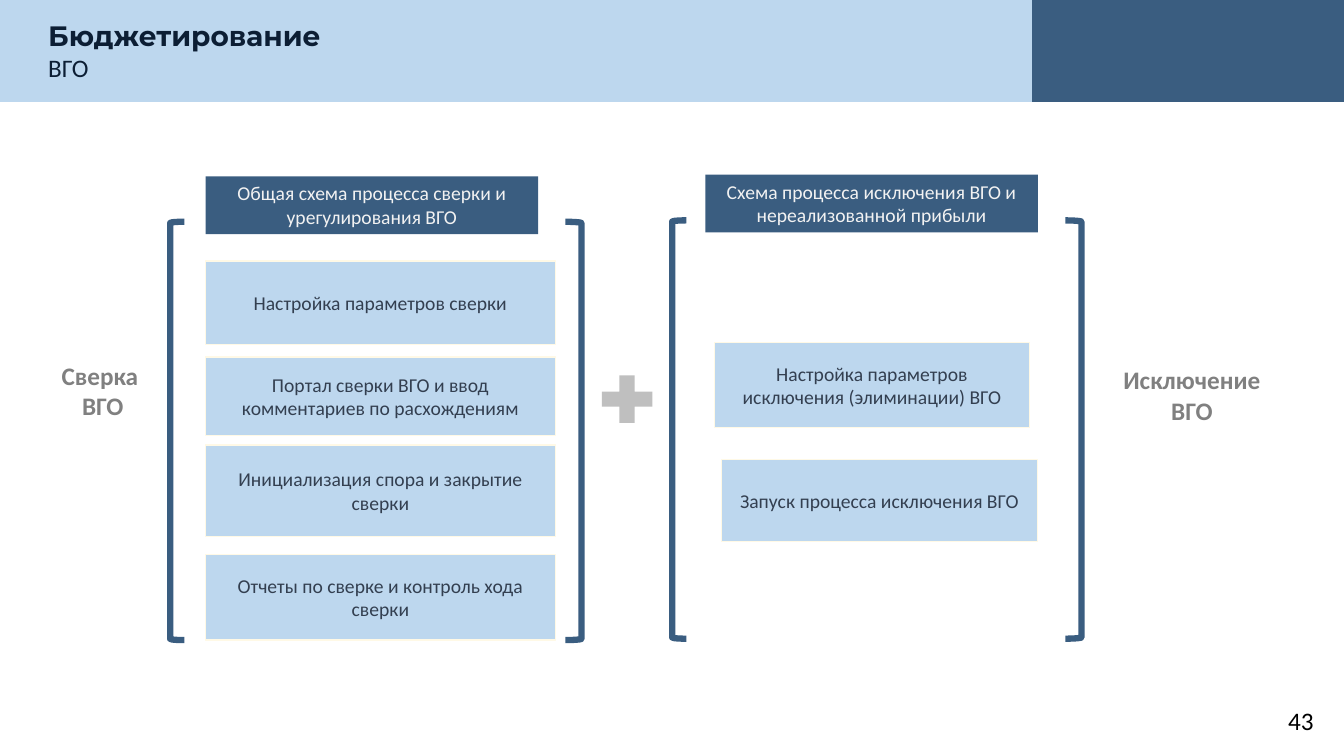
from dataclasses import dataclass
from pptx import Presentation
from pptx.dml.color import RGBColor
from pptx.enum.shapes import MSO_SHAPE
from pptx.enum.text import MSO_ANCHOR, MSO_AUTO_SIZE, PP_ALIGN
from pptx.util import Pt

RECT = MSO_SHAPE.RECTANGLE
OPEN = MSO_SHAPE.LEFT_BRACKET
CLOSE = MSO_SHAPE.RIGHT_BRACKET
PLUS = MSO_SHAPE.MATH_PLUS
TOP, MID = MSO_ANCHOR.TOP, MSO_ANCHOR.MIDDLE
LEFT, MIDDLE, RIGHT = PP_ALIGN.LEFT, PP_ALIGN.CENTER, PP_ALIGN.RIGHT
FIXED = MSO_AUTO_SIZE.NONE


@dataclass(frozen=True)
class Theme:
    pale: str = "BDD7EE"
    navy: str = "3A5D80"
    cream: str = "FFF9E6"
    ink: str = "0C1E34"
    slate: str = "333F50"
    light: str = "F2F2F2"
    gray: str = "808080"
    silver: str = "BFBFBF"
    black: str = "000000"
    head: str = "Montserrat"
    body: str = "Calibri"
    big: int = 20
    mid: int = 18
    small: int = 14


class Board:
    def __init__(self, slide, theme):
        self.slide = slide
        self.theme = theme

    def style(self, font, size, color, bold=False, name=None):
        font.name = name or self.theme.body
        font.size = Pt(size)
        font.bold = bold
        font.color.rgb = RGBColor.from_string(color)

    def fit(self, shape, anchor):
        frame = shape.text_frame
        frame.word_wrap = True
        frame.auto_size = FIXED
        frame.vertical_anchor = anchor
        return frame

    def words(self, shape, text, size, color, bold=False, align=MIDDLE, anchor=TOP):
        frame = self.fit(shape, anchor)
        frame.text = text
        for para in frame.paragraphs:
            para.alignment = align
            self.style(para.font, size, color, bold)

    def shape(self, kind, box, fill=None, line=None, width=1):
        item = self.slide.shapes.add_shape(kind, *map(Pt, box))
        item.shadow.inherit = False
        if fill:
            item.fill.solid()
            item.fill.fore_color.rgb = RGBColor.from_string(fill)
        else:
            item.fill.background()
        if line:
            item.line.color.rgb = RGBColor.from_string(line)
            item.line.width = Pt(width)
        else:
            item.line.fill.background()
        return item

    def title(self, box, main, sub):
        look = self.theme
        item = self.slide.shapes.title
        self.slide.shapes.element.append(item.element)
        item.left, item.top, item.width, item.height = map(Pt, box)
        para = self.fit(item, TOP).paragraphs[0]
        para.alignment = LEFT
        run = para.add_run()
        run.text = main
        self.style(run.font, look.big, look.ink, True, look.head)
        para.add_line_break()
        run = para.add_run()
        run.text = sub
        self.style(run.font, look.mid, look.ink)

    def label(self, box, text, color, bold=False, align=MIDDLE):
        item = self.slide.shapes.add_textbox(*map(Pt, box))
        self.words(item, text, self.theme.mid, color, bold, align)

    def header(self, left, top, text):
        look = self.theme
        item = self.shape(RECT, (left, top, 237.6, 41.2), look.navy)
        self.words(item, text, look.small, look.light)

    def step(self, box, text):
        look = self.theme
        item = self.shape(RECT, box, look.pale, look.cream)
        self.words(item, text, look.small, look.slate, anchor=MID)

    def frame(self, left, right, top):
        for kind, x, wide in ((OPEN, left, 10.1), (CLOSE, right, 11.5)):
            self.shape(kind, (x, top, wide, 298.8), line=self.theme.navy, width=4.5)


def main():
    deck = Presentation()
    deck.slide_width, deck.slide_height = Pt(960), Pt(540)
    look = Theme()
    board = Board(deck.slides.add_slide(deck.slide_layouts[5]), look)

    board.shape(RECT, (0, -0.5, 960, 73.3), look.pale)
    board.shape(RECT, (737.3, -0.5, 222.7, 73.3), look.navy)
    board.title((27.2, 9.5, 480, 53.5), "Бюджетирование", "ВГО")
    board.label((729.4, 500.4, 216, 28.8), "43", look.black, align=RIGHT)

    board.frame(121.6, 403.9, 158.4)
    board.header(146.9, 126, "Общая схема процесса сверки и урегулирования ВГО")
    checks = (
        (186.5, 59.5, "Настройка параметров сверки"),
        (255, 56, "Портал сверки ВГО и ввод комментариев по расхождениям"),
        (317.8, 65.5, "Инициализация спора и закрытие сверки"),
        (396.2, 61, "Отчеты по сверке и контроль хода сверки"),
    )
    for top, high, text in checks:
        board.step((146.9, top, 249.8, high), text)

    board.frame(480.2, 761, 157.4)
    board.header(503.8, 124.8, "Схема процесса исключения ВГО и нереализованной прибыли")
    cuts = (
        (510.2, 244.8, 60.5, "Настройка параметров исключения (элиминации) ВГО"),
        (515.5, 328, 59, "Запуск процесса исключения ВГО"),
    )
    for left, top, high, text in cuts:
        board.step((left, top, 225.4, high), text)

    board.label((0, 253.6, 146.9, 50.9), "Сверка \nВГО", look.gray, True)
    board.label((784.1, 257, 134.6, 50.9), "Исключение ВГО", look.gray, True)
    board.shape(PLUS, (423.4, 262.1, 49, 46.1), look.silver)

    deck.save("out.pptx")


if __name__ == "__main__":
    main()
